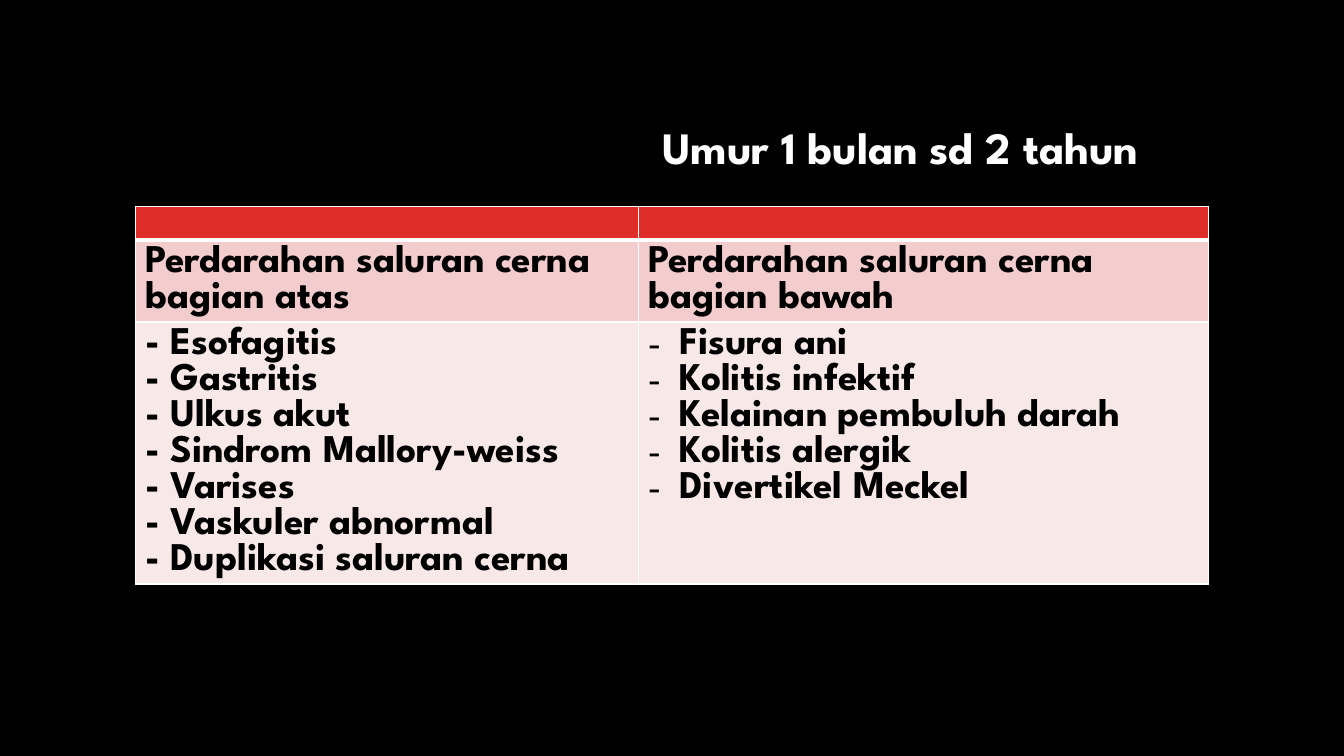
from dataclasses import dataclass

from lxml import etree
from pptx import Presentation
from pptx.dml.color import RGBColor
from pptx.oxml.ns import qn
from pptx.util import Inches, Pt

TITLE = "Umur 1 bulan sd 2 tahun"
HEADINGS = ["Perdarahan saluran cerna bagian atas",
            "Perdarahan saluran cerna bagian bawah"]
UPPER = ["- Esofagitis", "- Gastritis", "- Ulkus akut", "- Sindrom Mallory-weiss",
         "- Varises", "- Vaskuler abnormal", "- Duplikasi saluran cerna"]
LOWER = ["Fisura ani", "Kolitis infektif", "Kelainan pembuluh darah",
         "Kolitis alergik", "Divertikel Meckel"]
# Each row holds one list of lines per column
ROWS = [[[], []], [[h] for h in HEADINGS], [UPPER, LOWER]]

SLIDE_W, SLIDE_H = 13.33, 7.5
TABLE_LEFT, TABLE_TOP = 1.34, 2.05
COL_WIDTHS = [4.99, 5.66]
ROW_HEIGHTS = [0.33, 0.81, 2.6]
TITLE_BOX = (6.47, 1.14, 5.43, 0.64)
HANGING = 0.31


@dataclass(frozen=True)
class Theme:
    font: str = "League Spartan"
    bullet_font: str = "Calibri"
    background: str = "000000"
    light: str = "FFFFFF"
    dark: str = "000000"
    row_fills: tuple = ("DF2E28", "F3CDCD", "F9E8E8")
    title_size: int = 32
    body_size: int = 28
    empty_size: int = 18
    rule: int = 1
    header_rule: int = 3


THEME = Theme()


def add_run(p, text, size, color):
    r = p.add_run()
    r.text = text
    r.font.name = THEME.font
    r.font.size = Pt(size)
    r.font.bold = True
    r.font.color.rgb = RGBColor.from_string(color)


def add_dash_bullet(p):
    pPr = p._p.get_or_add_pPr()
    pPr.set("marL", str(Inches(HANGING)))
    pPr.set("indent", str(-Inches(HANGING)))
    etree.SubElement(pPr, qn("a:buFont")).set("typeface", THEME.bullet_font)
    etree.SubElement(pPr, qn("a:buChar")).set("char", "-")


def size_empty_paragraph(p):
    """Keep a cell without text as low as its row."""
    end = etree.SubElement(p._p, qn("a:endParaRPr"))
    end.set("sz", str(THEME.empty_size * 100))
    etree.SubElement(end, qn("a:latin")).set("typeface", THEME.font)


def set_borders(cell, widths):
    """Draw cell borders; widths maps each side (L, R, T, B) to points."""
    tcPr = cell._tc.get_or_add_tcPr()
    for i, (side, width) in enumerate(widths.items()):
        ln = etree.Element(qn(f"a:ln{side}"), w=str(Pt(width)))
        fill = etree.SubElement(ln, qn("a:solidFill"))
        etree.SubElement(fill, qn("a:srgbClr")).set("val", THEME.light)
        tcPr.insert(i, ln)


def fill_cell(cell, lines, row, bulleted):
    cell.fill.solid()
    cell.fill.fore_color.rgb = RGBColor.from_string(THEME.row_fills[row])
    set_borders(cell, {
        "L": THEME.rule,
        "R": THEME.rule,
        "T": THEME.header_rule if row == 1 else THEME.rule,
        "B": THEME.header_rule if row == 0 else THEME.rule,
    })
    tf = cell.text_frame
    if not lines:
        size_empty_paragraph(tf.paragraphs[0])
    for i, line in enumerate(lines):
        p = tf.add_paragraph() if i else tf.paragraphs[0]
        if bulleted:
            add_dash_bullet(p)
        add_run(p, line, THEME.body_size, THEME.dark)


def add_causes_table(slide):
    table = slide.shapes.add_table(
        len(ROWS), len(COL_WIDTHS), Inches(TABLE_LEFT), Inches(TABLE_TOP),
        Inches(sum(COL_WIDTHS)), Inches(sum(ROW_HEIGHTS))).table
    for column, width in zip(table.columns, COL_WIDTHS):
        column.width = Inches(width)
    for row, height in zip(table.rows, ROW_HEIGHTS):
        row.height = Inches(height)
    for r, row in enumerate(ROWS):
        for c, lines in enumerate(row):
            fill_cell(table.cell(r, c), lines, r, lines is LOWER)


def add_title(slide):
    tf = slide.shapes.add_textbox(*map(Inches, TITLE_BOX)).text_frame
    tf.word_wrap = True
    add_run(tf.paragraphs[0], TITLE, THEME.title_size, THEME.light)


def main():
    prs = Presentation()
    prs.slide_width, prs.slide_height = Inches(SLIDE_W), Inches(SLIDE_H)
    slide = prs.slides.add_slide(prs.slide_layouts[6])
    slide.background.fill.solid()
    slide.background.fill.fore_color.rgb = RGBColor.from_string(THEME.background)
    add_causes_table(slide)
    add_title(slide)
    prs.save("out.pptx")


if __name__ == "__main__":
    main()
